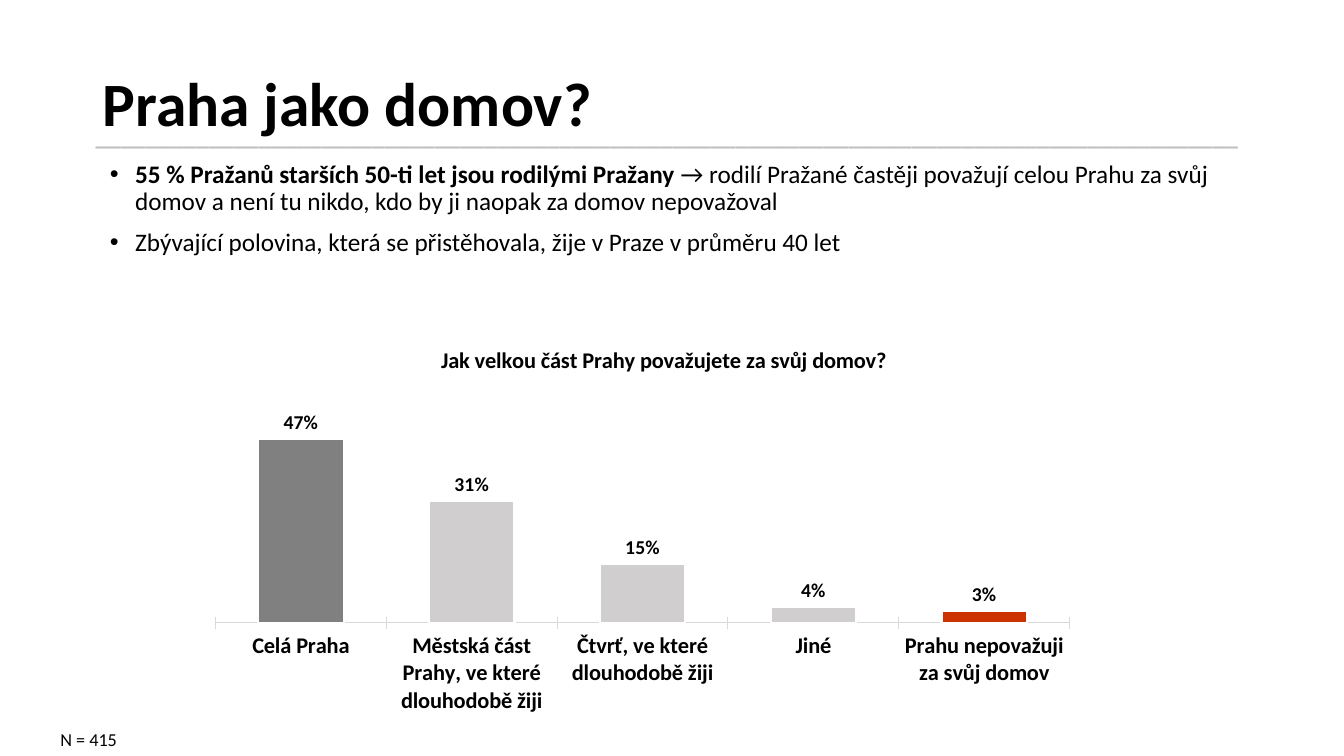
import pptx
import pptx.util
import pptx.oxml
import pptx.chart.data
import pptx.dml.color
import pptx.enum.chart
import pptx.enum.text

Inches = pptx.util.Inches
Pt = pptx.util.Pt
RGBColor = pptx.dml.color.RGBColor

BLACK = RGBColor(0x00, 0x00, 0x00)
WHITE = RGBColor(0xFF, 0xFF, 0xFF)
RULE = RGBColor(0xBF, 0xBF, 0xBF)
AXIS = RGBColor(0xD9, 0xD9, 0xD9)
DARK = RGBColor(0x80, 0x80, 0x80)
LIGHT = RGBColor(0xD0, 0xCE, 0xCE)
RED = RGBColor(0xCC, 0x33, 0x00)

ASK = "Jak velkou část Prahy považujete za svůj domov?"
BARS = [
    ("Celá Praha", 0.47, DARK),
    ("Městská část Prahy, ve které dlouhodobě žiji", 0.31, LIGHT),
    ("Čtvrť, ve které dlouhodobě žiji", 0.15, LIGHT),
    ("Jiné", 0.04, LIGHT),
    ("Prahu nepovažuji za svůj domov", 0.03, RED),
]
# Each point is a list of (text, bold) runs.
POINTS = [
    [("55 % Pražanů starších 50-ti let jsou rodilými Pražany ", True),
     ("→ rodilí Pražané častěji považují celou Prahu za svůj domov "
      "a není tu nikdo, kdo by ji naopak za domov nepovažoval", False)],
    [("Zbývající polovina, která se přistěhovala, žije v Praze "
      "v průměru 40 let", False)],
]


def style(font, size, bold=False, color=BLACK):
    font.name = "Calibri"
    font.size = Pt(size)
    font.bold = bold
    font.color.rgb = color


def place(shape, box):
    shape.left, shape.top, shape.width, shape.height = map(Inches, box)


def add_text(slide, box, text, size, bold=False, color=BLACK):
    shape = slide.shapes.add_textbox(*map(Inches, box))
    shape.text_frame.word_wrap = True
    line = shape.text_frame.paragraphs[0]
    line.text = text
    style(line.font, size, bold, color)
    return line


def add_title(slide, box):
    title = slide.shapes.title
    place(title, box)
    frame = title.text_frame
    frame.auto_size = pptx.enum.text.MSO_AUTO_SIZE.NONE
    frame.vertical_anchor = pptx.enum.text.MSO_ANCHOR.MIDDLE
    line = frame.paragraphs[0]
    line.text = "Praha jako domov?"
    line.alignment = pptx.enum.text.PP_ALIGN.LEFT
    line.line_spacing = 0.9
    style(line.font, 44, True)


def add_points(slide, box):
    body = slide.placeholders[1]
    place(body, box)
    frame = body.text_frame
    frame.auto_size = pptx.enum.text.MSO_AUTO_SIZE.NONE
    for i, parts in enumerate(POINTS):
        line = frame.add_paragraph() if i else frame.paragraphs[0]
        line.line_spacing = 0.9
        line.space_before = Pt(10)
        style(line.font, 18)
        props = line._p.get_or_add_pPr()
        props.set("marL", str(Inches(0.25)))
        props.set("indent", str(-Inches(0.25)))
        for text, bold in parts:
            run = line.add_run()
            run.text = text
            run.font.bold = bold


def set_plot(chart, area):
    """Fix the inner plot area as fractions of the chart."""
    plot = chart._chartSpace.chart.plotArea
    for old in plot.xpath("c:layout"):
        plot.remove(old)
    sizes = "".join(f'<c:{k} val="{v}"/>' for k, v in zip("xywh", area))
    plot.insert(0, pptx.oxml.parse_xml(
        '<c:layout xmlns:c="http://schemas.openxmlformats.org/drawingml/2006/chart">'
        '<c:manualLayout><c:layoutTarget val="inner"/><c:xMode val="edge"/>'
        f'<c:yMode val="edge"/>{sizes}</c:manualLayout></c:layout>'))


def add_bars(slide, box):
    names, vals, colors = zip(*BARS)
    data = pptx.chart.data.CategoryChartData(number_format="0%")
    data.categories = names
    data.add_series(ASK, vals)
    kind = pptx.enum.chart.XL_CHART_TYPE.COLUMN_CLUSTERED
    chart = slide.shapes.add_chart(kind, *map(Inches, box), data).chart
    style(chart.font, 10)
    chart.has_legend = False
    chart.has_title = True
    head = chart.chart_title.text_frame.paragraphs[0]
    head.text = ASK
    style(head.font, 16, True)
    set_plot(chart, (0.08, 0.23, 0.8, 0.45))

    marks = pptx.enum.chart.XL_TICK_MARK
    cats = chart.category_axis
    cats.major_tick_mark = marks.CROSS
    cats.minor_tick_mark = marks.NONE
    cats.format.line.color.rgb = AXIS
    cats.format.line.width = Pt(0.75)
    style(cats.tick_labels.font, 16, True)
    scale = chart.value_axis
    scale.visible = False
    scale.has_major_gridlines = False
    scale.minimum_scale, scale.maximum_scale = 0, 0.5

    plot = chart.plots[0]
    plot.gap_width = 100
    plot.vary_by_categories = False
    bars = plot.series[0]
    for i, color in enumerate(colors):
        look = bars.points[i].format
        look.fill.solid()
        look.fill.fore_color.rgb = color
        look.line.color.rgb = WHITE
        look.line.width = Pt(1.5)
    tags = bars.data_labels
    tags.show_value = True
    tags.number_format = "0%"
    tags.number_format_is_linked = False
    tags.position = pptx.enum.chart.XL_LABEL_POSITION.OUTSIDE_END
    style(tags.font, 14, True)


def main():
    deck = pptx.Presentation()
    deck.slide_width, deck.slide_height = Inches(13.33), Inches(7.5)
    slide = deck.slides.add_slide(deck.slide_layouts[1])
    rule = add_text(slide, (0.85, 1.12, 11.64, 0.41), "_" * 91, 18, True, RULE)
    rule.line_spacing = 1.07
    rule.space_after = Pt(8)
    add_title(slide, (0.92, 0.33, 10.8, 1.45))
    add_points(slide, (0.99, 1.55, 11.43, 1.45))
    add_bars(slide, (1.29, 3.24, 10.59, 4.32))
    add_text(slide, (0.5, 7.18, 0.99, 0.32), "N = 415", 13)
    deck.save("out.pptx")


if __name__ == "__main__":
    main()
